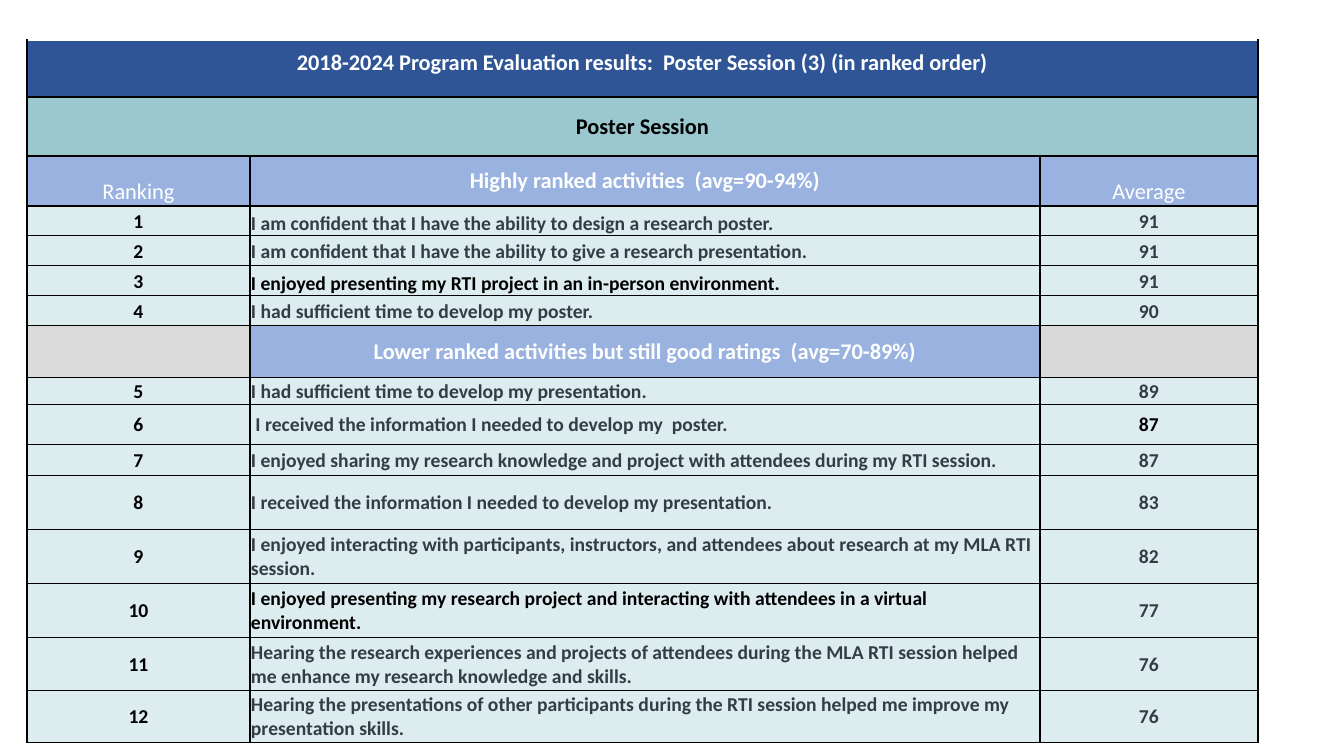
"""Build the ranked poster session evaluation slide."""
from lxml.etree import SubElement
from pptx import Presentation
from pptx.dml.color import RGBColor
from pptx.enum.text import MSO_ANCHOR as Anchor, PP_ALIGN as Align
from pptx.oxml.ns import qn
from pptx.util import Emu, Pt

SCALE = 914400 / 100.8
COLORS = {
    "black": "000000", "white": "FFFFFF", "slate": "333D47",
    "navy": "2F5597", "teal": "9BC7CE", "blue": "8FAADC",
    "mint": "DDECEE", "gray": "A6A6A6", "light_gray": "D9D9D9",
}
COLUMN_WIDTHS = [223, 790, 218]
ROW_HEIGHTS = [57, 59, 50, 30, 30, 30, 30, 52, 27, 40, 31, 54, 54, 54, 53, 52]
LOWER_ROW = 7
HIGH_ITEMS = [
    ("I am confident that I have the ability to design a research poster.", 91),
    ("I am confident that I have the ability to give a research presentation.", 91),
    ("I enjoyed presenting my RTI project in an in-person environment.", 91),
    ("I had sufficient time to develop my poster.", 90),
]
LOWER_ITEMS = [
    ("I had sufficient time to develop my presentation.", 89),
    (" I received the information I needed to develop my  poster.", 87),
    ("I enjoyed sharing my research knowledge and project with attendees "
     "during my RTI session.", 87),
    ("I received the information I needed to develop my presentation.", 83),
    ("I enjoyed interacting with participants, instructors, and attendees "
     "about research at my MLA RTI session.", 82),
    ("I enjoyed presenting my research project and interacting with attendees "
     "in a virtual environment.", 77),
    ("Hearing the research experiences and projects of attendees during the "
     "MLA RTI session helped me enhance my research knowledge and skills.", 76),
    ("Hearing the presentations of other participants during the RTI session "
     "helped me improve my presentation skills.", 76),
]
BLACK_ACTIVITIES = {3, 10}
BLACK_AVERAGES = {6}
BOTTOM_ACTIVITIES = {1, 3}


def px(length):
    """Turn pixels into EMU."""
    return Emu(round(length * SCALE))


def add_borders(cell, top="black"):
    """Draw a one-point line on every side of a cell."""
    properties = cell._tc.get_or_add_tcPr()
    sides = {"lnL": "black", "lnR": "black", "lnT": top, "lnB": "black"}
    for side, color in sides.items():
        line = SubElement(properties, qn(f"a:{side}"), w=str(Pt(1)))
        solid = SubElement(line, qn("a:solidFill"))
        SubElement(solid, qn("a:srgbClr"), val=COLORS[color])


def fill_cell(cell, color, opacity=100):
    """Fill a cell with a solid colour of the given opacity."""
    cell.fill.solid()
    cell.fill.fore_color.rgb = RGBColor.from_string(COLORS[color])
    if opacity < 100:
        tint = cell._tc.tcPr.find(f"{qn('a:solidFill')}/{qn('a:srgbClr')}")
        SubElement(tint, qn("a:alpha"), val=str(opacity * 1000))


def write_cell(cell, text, color, size=16, bold=True, align=Align.CENTER,
               anchor=Anchor.MIDDLE, inset=0):
    """Put one styled paragraph in a cell."""
    cell.vertical_anchor = anchor
    cell.margin_left = cell.margin_right = cell.margin_top = px(inset)
    cell.margin_bottom = 0
    para = cell.text_frame.paragraphs[0]
    para.text = text
    para.alignment = align
    font = para.font
    font.name, font.size, font.bold = "Calibri", Pt(size), bold
    font.color.rgb = RGBColor.from_string(COLORS[color])


def add_grid(page):
    """Add the bordered table with its column and row sizes."""
    frame = page.shapes.add_table(
        len(ROW_HEIGHTS), len(COLUMN_WIDTHS), px(27), px(40),
        px(sum(COLUMN_WIDTHS)), px(sum(ROW_HEIGHTS)))
    table = frame.table
    table.horz_banding = table.first_row = False
    for column, width in zip(table.columns, COLUMN_WIDTHS):
        column.width = px(width)
    for index, (row, height) in enumerate(zip(table.rows, ROW_HEIGHTS)):
        row.height = px(height)
        for cell in row.cells:
            add_borders(cell, "black" if index else "white")
    return table


def add_banner(table, row, text, fill, color):
    """Merge a row into one heading and return its cell."""
    cell = table.cell(row, 0)
    cell.merge(table.cell(row, len(COLUMN_WIDTHS) - 1))
    fill_cell(cell, fill)
    write_cell(cell, text, color)
    return cell


def add_headings(table):
    """Write the banners and the two group headings."""
    title = add_banner(
        table, 0, "2018-2024 Program Evaluation results:  "
        "Poster Session (3) (in ranked order)", "navy", "white")
    title.vertical_anchor = Anchor.BOTTOM
    title.margin_bottom = px(20)
    add_banner(table, 1, "Poster Session", "teal", "black")
    for column, text in ((0, "Ranking"), (2, "Average")):
        cell = table.cell(2, column)
        fill_cell(cell, "blue", 90)
        write_cell(cell, text, "white", bold=False, anchor=Anchor.BOTTOM)
    groups = ((2, "Highly ranked activities  (avg=90-94%)"),
              (LOWER_ROW, "Lower ranked activities but still good ratings  (avg=70-89%)"))
    for row, text in groups:
        cell = table.cell(row, 1)
        fill_cell(cell, "blue", 90)
        write_cell(cell, text, "white")
    fill_cell(table.cell(LOWER_ROW, 0), "gray", 40)
    fill_cell(table.cell(LOWER_ROW, 2), "light_gray")


def add_item(table, row, rank, activity, average):
    """Write one ranked activity with its average."""
    cells = [table.cell(row, column) for column in range(3)]
    for cell in cells:
        fill_cell(cell, "mint")
    write_cell(cells[0], str(rank), "black", 14, inset=1)
    write_cell(cells[1], activity,
               "black" if rank in BLACK_ACTIVITIES else "slate", 14,
               align=Align.LEFT, inset=1,
               anchor=Anchor.BOTTOM if rank in BOTTOM_ACTIVITIES else Anchor.MIDDLE)
    write_cell(cells[2], str(average),
               "black" if rank in BLACK_AVERAGES else "slate", 14, inset=1)


def main():
    """Build and save the deck."""
    deck = Presentation()
    deck.slide_width, deck.slide_height = px(1344), px(756)
    page = deck.slides.add_slide(deck.slide_layouts[6])
    table = add_grid(page)
    add_headings(table)
    for rank, (activity, average) in enumerate(HIGH_ITEMS + LOWER_ITEMS, 1):
        row = rank + (2 if rank <= len(HIGH_ITEMS) else 3)
        add_item(table, row, rank, activity, average)
    deck.save("out.pptx")


if __name__ == "__main__":
    main()
